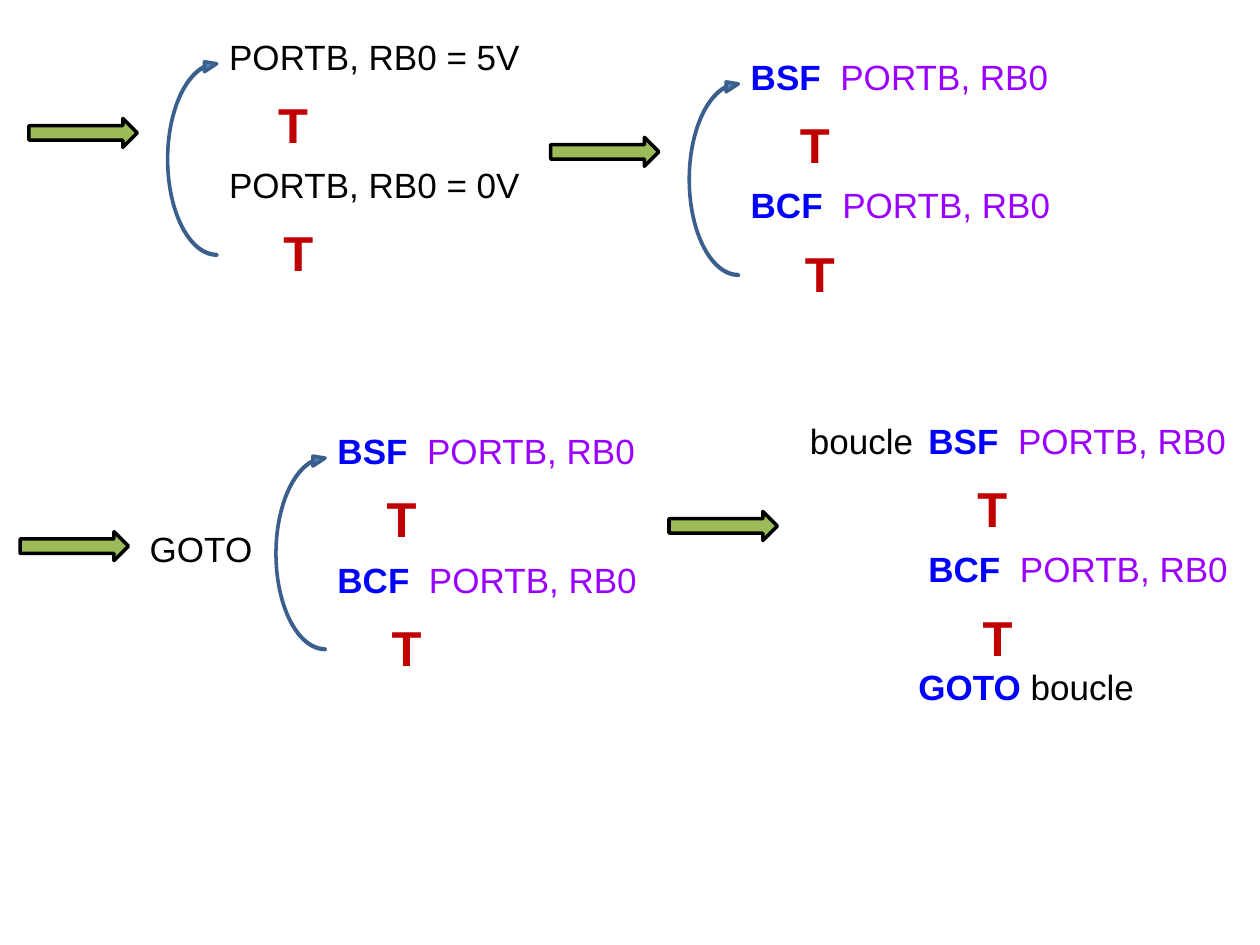
"""Build the slide that turns a blinking output into an assembler loop."""
from dataclasses import dataclass
from typing import Optional

from lxml.etree import SubElement
from pptx import Presentation
from pptx.dml.color import RGBColor
from pptx.enum.shapes import MSO_SHAPE
from pptx.oxml.ns import qn
from pptx.util import Inches, Pt

COLUMNS, ROWS = 10, 7.5
CELL = Inches(1)
FONT = "Arial"
BLACK = RGBColor(0x00, 0x00, 0x00)
OPCODE_BLUE = RGBColor(0x00, 0x00, 0xFF)
OPERAND_PURPLE = RGBColor(0x99, 0x00, 0xFF)
DELAY_RED = RGBColor(0xC0, 0x00, 0x00)
STEP_GREEN = RGBColor(0x9B, 0xBB, 0x59)
LOOP_FILL = RGBColor(0x4F, 0x81, 0xBD)
LOOP_LINE = RGBColor(0x3A, 0x5F, 0x8C)

LINE_HEIGHT = 0.44
COMMAND_PITCH = 1.02
DELAY_DROP = 0.47
DELAY_INDENTS = (0.39, 0.43)
LOOP_WIDTH, LOOP_HEIGHT, LOOP_DROP = 0.39, 1.56, 0.235


@dataclass(frozen=True)
class Span:
    """A stretch of text in one colour and weight."""
    words: str
    color: RGBColor = BLACK
    bold: bool = False


@dataclass(frozen=True)
class Label:
    """A line of text placed on the grid."""
    spans: tuple[Span, ...]
    column: float
    row: float
    width: float
    wrap: bool = True


@dataclass(frozen=True)
class Program:
    """Two commands, each followed by a delay, with the arrow leading to them."""
    column: float
    row: float
    step: tuple[float, float]
    commands: tuple[tuple[Span, ...], tuple[Span, ...]]
    widths: tuple[float, float] = (3.28, 3.36)
    looped: bool = True
    extras: tuple[Label, ...] = ()


def instruction(opcode: str) -> tuple[Span, ...]:
    """Return an opcode followed by its operands."""
    return Span(f"{opcode}  ", OPCODE_BLUE, True), Span("PORTB, RB0", OPERAND_PURPLE)


DELAY = (Span("T", DELAY_RED, True),)
LEVELS = ((Span("PORTB, RB0 = 5V"),), (Span("PORTB, RB0 = 0V"),))
INSTRUCTIONS = (instruction("BSF"), instruction("BCF"))
PROGRAMS = (
    Program(1.72, 0.23, (0.23, 0.94), LEVELS, (2.58, 2.66)),
    Program(5.86, 0.39, (4.37, 1.09), INSTRUCTIONS),
    Program(2.58, 3.36, (0.16, 4.22), INSTRUCTIONS,
            extras=(Label((Span("GOTO"),), 1.09, 4.14, 1.17),)),
    Program(7.27, 3.28, (5.31, 4.06), INSTRUCTIONS, (2.73, 2.66), False, (
        Label((Span("boucle"),), 6.33, 3.28, 1.03, False),
        Label((Span("GOTO ", OPCODE_BLUE, True), Span("boucle")), 7.19, 5.23, 2.34),
    )),
)


def box(column: float, row: float, width: float, height: float) -> list[int]:
    """Convert grid cells to slide lengths."""
    return [round(cells * CELL) for cells in (column, row, width, height)]


def write(shapes, spans: tuple[Span, ...], *, column: float, row: float, width: float,
          height: float = LINE_HEIGHT, size: int = 20, wrap: bool = True) -> None:
    """Add one line of text made of coloured spans."""
    frame = shapes.add_textbox(*box(column, row, width, height)).text_frame
    frame.word_wrap = wrap
    for span in spans:
        run = frame.paragraphs[0].add_run()
        run.text = span.words
        run.font.name = FONT
        run.font.size = Pt(size)
        run.font.bold = span.bold
        run.font.color.rgb = span.color


def draw_arrow(shapes, preset: MSO_SHAPE, place: list[int], fill: RGBColor,
               line: RGBColor, adjustments: Optional[tuple[float, ...]] = None):
    """Add a filled and outlined arrow without a shadow."""
    arrow = shapes.add_shape(preset, *place)
    arrow.shadow.inherit = False
    arrow.fill.solid()
    arrow.fill.fore_color.rgb = fill
    arrow.line.color.rgb = line
    arrow.line.width = Pt(2)
    for index, value in enumerate(adjustments or ()):
        arrow.adjustments[index] = value
    return arrow


def draw_loop(shapes, program: Program) -> None:
    """Add the curved arrow from the last delay back to the first command."""
    place = box(program.column - LOOP_WIDTH, program.row + LOOP_DROP,
                LOOP_WIDTH, LOOP_HEIGHT)
    loop = draw_arrow(shapes, MSO_SHAPE.CURVED_RIGHT_ARROW, place,
                      LOOP_FILL, LOOP_LINE, (0.016, 0.204, 0.25))
    loop.rotation = 180
    loop.element.spPr.find(qn("a:xfrm")).set("flipH", "1")


def draw_program(slide, program: Program) -> None:
    """Add the step arrow and the grouped lines of one program."""
    draw_arrow(slide.shapes, MSO_SHAPE.RIGHT_ARROW, box(*program.step, 0.86, 0.23),
               STEP_GREEN, BLACK)
    shapes = slide.shapes.add_group_shape().shapes
    lines = zip(program.commands, program.widths, DELAY_INDENTS)
    for index, (command, width, indent) in enumerate(lines):
        row = program.row + index * COMMAND_PITCH
        write(shapes, command, column=program.column, row=row, width=width)
        write(shapes, DELAY, column=program.column + indent, row=row + DELAY_DROP,
              width=0.63, height=0.57, size=28)
    for extra in program.extras:
        write(shapes, extra.spans, column=extra.column, row=extra.row,
              width=extra.width, wrap=extra.wrap)
    if program.looped:
        draw_loop(shapes, program)


def main() -> None:
    """Build and save the presentation."""
    deck = Presentation()
    deck.slide_width, deck.slide_height = COLUMNS * CELL, round(ROWS * CELL)
    slide = deck.slides.add_slide(deck.slide_layouts[6])
    for program in PROGRAMS:
        draw_program(slide, program)
    deck.save("out.pptx")


if __name__ == "__main__":
    main()
